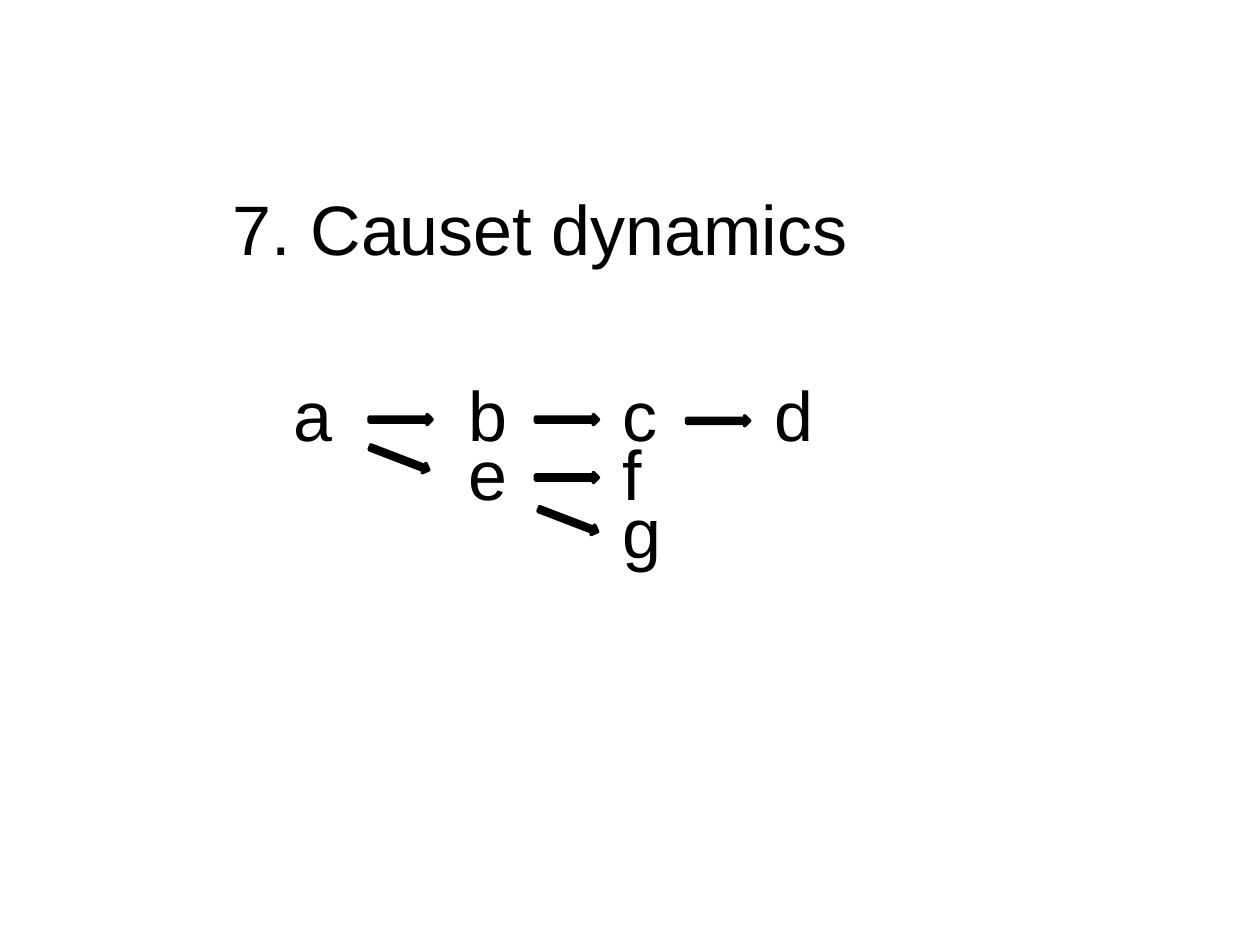
"""Build the causet dynamics slide: a title and a small branching causal diagram."""
from lxml import etree
from pptx import Presentation
from pptx import util as u
from pptx.dml.color import RGBColor
from pptx.enum import shapes
from pptx.oxml import ns

BLACK = RGBColor(0, 0, 0)
FONT = "Arial"
COLUMN_STOPS = (0.31, 1.7, 2.92, 4.13)
CAUSET_ROWS = ("\ta\tb\tc\td", "\t\te\tf", "\t\t\tg")
ARROWS = (
    (2.93, 3.29, 0),
    (4.25, 3.29, 0),
    (5.45, 3.3, 0),
    (4.25, 3.75, 0),
    (2.92, 3.6, 21),
    (4.26, 4.09, 21),
)


def add_text(s, left, top, width, height, lines, spacing=None, stops=()):
    tf = s.shapes.add_textbox(*map(u.Inches, (left, top, width, height))).text_frame
    tf.word_wrap = True
    tf.text = "\n".join(lines)
    for p in tf.paragraphs:
        if spacing:
            p.line_spacing = spacing
        if stops:
            add_tab_stops(p, stops)
        for r in p.runs:
            r.font.name = FONT
            r.font.size = u.Pt(40)
            r.font.color.rgb = BLACK


def add_tab_stops(p, stops):
    tabs = etree.SubElement(p._p.get_or_add_pPr(), ns.qn("a:tabLst"))
    for stop in stops:
        etree.SubElement(tabs, ns.qn("a:tab"), pos=str(u.Inches(stop)), algn="l")


def add_arrow(s, left, top, rotation):
    sp = s.shapes.add_shape(
        shapes.MSO_SHAPE.RIGHT_ARROW, *map(u.Inches, (left, top, 0.5, 0.08))
    )
    sp.rotation = rotation
    sp.shadow.inherit = False
    sp.fill.solid()
    sp.fill.fore_color.rgb = BLACK
    sp.line.color.rgb = BLACK
    sp.line.width = u.Pt(2)


def main():
    prs = Presentation()
    prs.slide_width, prs.slide_height = u.Inches(10), u.Inches(7.5)
    s = prs.slides.add_slide(prs.slide_layouts[6])
    add_text(s, 1.75, 1.42, 5.25, 0.92, ["7. Causet dynamics"])
    add_text(s, 1.92, 3.08, 5.25, 1.75, CAUSET_ROWS, 0.7, COLUMN_STOPS)
    for arrow in ARROWS:
        add_arrow(s, *arrow)
    prs.save("out.pptx")


if __name__ == "__main__":
    main()
